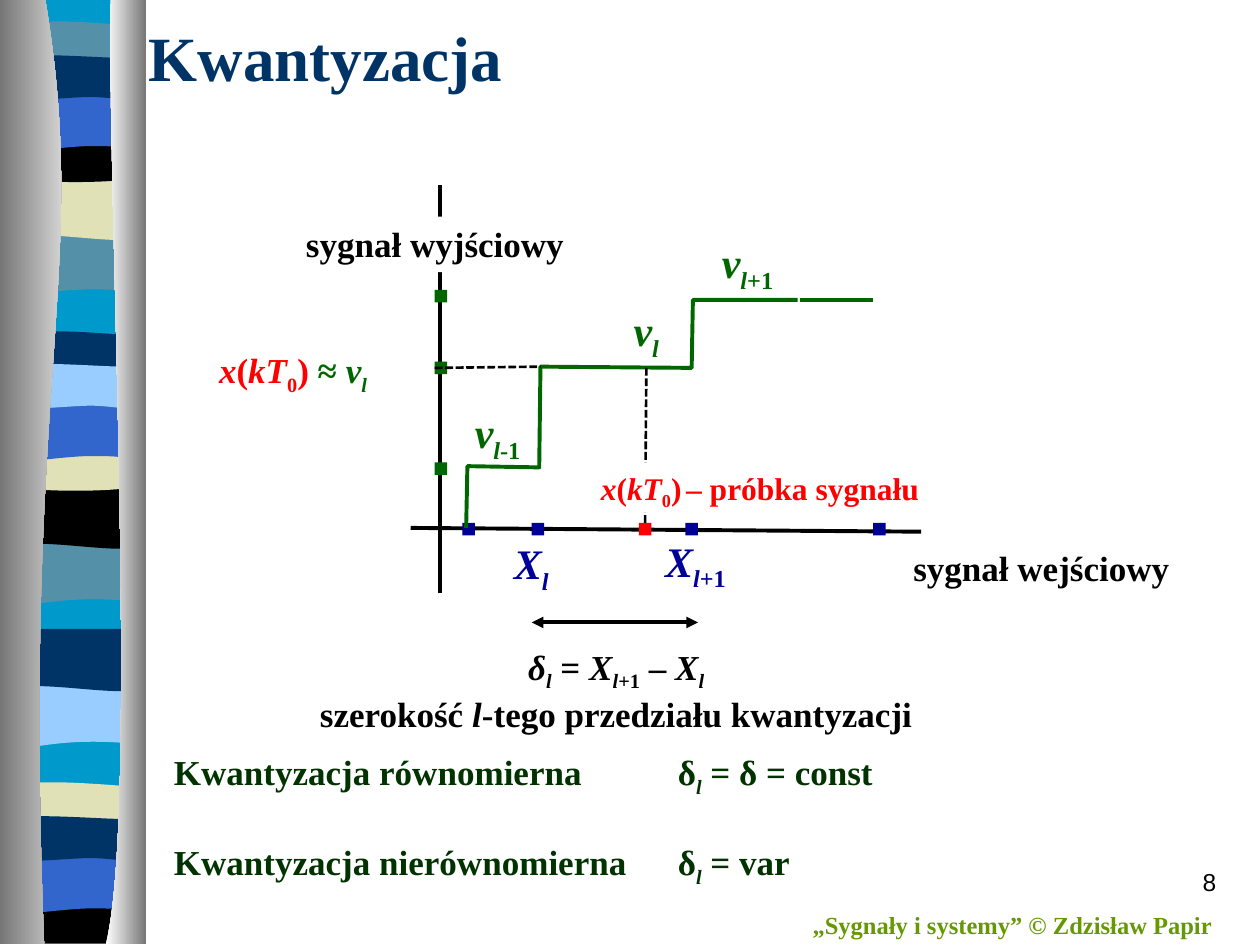
from lxml.etree import SubElement
from pptx import Presentation
from pptx.dml.color import RGBColor
from pptx.enum.dml import MSO_LINE
from pptx.enum.shapes import MSO_CONNECTOR, MSO_SHAPE
from pptx.enum.text import MSO_ANCHOR, PP_ALIGN
from pptx.oxml.ns import qn
from pptx.util import Inches, Pt

COLS, ROWS = 10, 7.5
CELL = Inches(1)
NAVY, BLUE, GREEN, RED, BLACK, WHITE = (
    "003366", "000099", "006600", "FF0000", "000000", "FFFFFF")
L, R = 0.05, 1.14

WAVES = {
    "swell": ([(R, 0)], [(0.39, 0.39), (0.24, 0.55), (L, 0.47)], 0.47),
    "dip": ([(R, 0)], [(0.96, 0.55), (0.39, 0.41), (L, 0.47)], 0.47),
    "thin": ([(0.12, -0.05), (0.29, -0.04), (0.47, -0.04),
              (0.65, -0.04), (1, -0.01), (R, 0)],
             [(0.96, 0.29), (0.24, 0.29), (L, 0.24)], 0.24),
    "bowl": ([(0.72, 0.05), (0.91, 0), (R, 0)],
             [(0.96, 0.38), (0.24, 0.38), (L, 0.32)], 0.32),
    "arch": ([(R, 0)], [(0.97, 0.42), (0.9, 0.42), (0.72, 0.42),
                        (0.54, 0.42), (0.22, 0.47), (L, 0.47)], 0.47),
    "roll": ([(0.21, -0.05), (0.79, 0), (0.97, 0), (1.15, 0), (1.1, 0), (R, 0)],
             [(1.07, 0.36), (0.9, 0.31), (0.72, 0.31),
              (0.54, 0.31), (0.17, 0.36), (L, 0.31)], 0.31),
    "base": ([(0.72, 0.05), (0.91, 0), (R, 0)], [(L, 0.37)], 0.37),
}
BANDS = [
    ("swell", 1.85, "5490A8"), ("dip", 1.41, "E1E1B7"), ("thin", 0.21, "5490A8"),
    ("bowl", 1.08, BLACK), ("arch", 0.74, "3366CC"), ("roll", 0.46, NAVY),
    ("swell", 4.31, "5490A8"), ("dip", 3.86, BLACK), ("thin", 2.67, NAVY),
    ("bowl", 3.53, "E1E1B7"), ("arch", 3.2, "3366CC"), ("roll", 2.91, "99CCFF"),
    ("swell", 5.44, "99CCFF"), ("dip", 4.99, NAVY), ("thin", 6.25, "E1E1B7"),
    ("base", 7.12, BLACK), ("arch", 6.79, "3366CC"), ("roll", 6.5, NAVY),
]


def hue(code):
    """Turn a hex string into a colour."""
    return RGBColor.from_string(code)


def span(*cells):
    """Turn counts of grid cells into lengths."""
    return [round(n * CELL) for n in cells]


def trace(slide, start, *edges, close=True, top=0):
    """Draw an outline of straight edges (one point) and curves (threes)."""
    pts = [span(x, y + top) for x, y in [start, *(p for e in edges for p in e)]]
    pen = slide.shapes.build_freeform(*pts[0], scale=1.0)
    pen.add_line_segments(pts[1:], close=close)
    form = pen.convert_to_shape()
    form.shadow.inherit = False
    form.line.fill.background()
    nodes = iter(list(form._element.iter(qn("a:lnTo"))))
    for edge in edges:
        for _ in range(max(1, len(edge) // 3)):
            node = next(nodes)
            if len(edge) > 1:
                node.tag = qn("a:cubicBezTo")
                for more in (next(nodes), next(nodes)):
                    node.append(more[0])
                    more.getparent().remove(more)
    return form


def paint(form, code):
    """Fill a shape with one colour."""
    form.fill.solid()
    form.fill.fore_color.rgb = hue(code)


def shade(form, *codes):
    """Fill a shape with a gradient from left to right."""
    form.fill.gradient()
    form.fill.gradient_angle = 0
    for stop, code in zip(form.fill.gradient_stops, codes):
        stop.color.rgb = hue(code)


def border(slide):
    """Draw the striped side border and its two pillars."""
    paint(trace(slide, (R, 0), [(R, 7.47)], [(L, 7.47)], [(L, 0)]), "0099CC")
    for kind, top, code in BANDS:
        lid, foot, deep = WAVES[kind]
        paint(trace(slide, (R, 0), [(R, deep)], foot, [(L, 0)], lid, top=top), code)
    shade(trace(slide, (0.36, 0), [(0.72, 2.16), (0.17, 2.96), (0.35, 7.49)],
                [(0, 7.49)], [(0, 0)]), "767676", WHITE)
    shade(trace(slide, (0.88, 0), [(0.84, 1.25), (1.11, 6.46), (0.84, 7.49)],
                [(1.16, 7.49)], [(1.16, 0)]), WHITE, "767676")


def write(box, *paras, size=20, code=BLACK, font="Times New Roman", bold=True,
          align=PP_ALIGN.LEFT, wrap=False, anchor=MSO_ANCHOR.TOP, gap=0):
    """Set paragraphs of (text, marks, colour) runs; i is italic, s is subscript."""
    frame = box.text_frame
    frame.word_wrap, frame.vertical_anchor = wrap, anchor
    for n, runs in enumerate(paras):
        para = frame.add_paragraph() if n else frame.paragraphs[0]
        para.alignment = align
        para.space_before = Pt(gap if n else 0)
        for text, marks, *own in runs:
            if text == "\n":
                para.add_line_break()
                continue
            run = para.add_run()
            run.text = text
            face = run.font
            face.name, face.size, face.bold = font, Pt(size), bold
            face.italic = "i" in marks
            face.color.rgb = hue(own[0] if own else code)
            if "s" in marks:
                run._r.get_or_add_rPr().set("baseline", "-25000")


def label(slide, area, *runs, back=None, **style):
    """Add a text box, on a plain ground if one is given."""
    box = slide.shapes.add_textbox(*span(*area))
    if back:
        paint(box, back)
    write(box, runs, **style)


def place(box, *area):
    """Move a placeholder to an area of the grid."""
    box.left, box.top, box.width, box.height = span(*area)


def rule(slide, start, end, code=BLACK, width=2.25, dash=False, heads=False):
    """Draw a straight line, dashed or with two arrowheads."""
    link = slide.shapes.add_connector(MSO_CONNECTOR.STRAIGHT, *span(*start, *end))
    link.line.color.rgb = hue(code)
    link.line.width = Pt(width)
    if dash:
        link.line.dash_style = MSO_LINE.SQUARE_DOT
    props = link._element.spPr
    if heads:
        for tag in ("a:headEnd", "a:tailEnd"):
            SubElement(props.find(qn("a:ln")), qn(tag), type="triangle")
    SubElement(props, qn("a:effectLst"))


def mark(slide, x, y, code):
    """Draw a small square mark."""
    dot = slide.shapes.add_shape(MSO_SHAPE.RECTANGLE, *span(x, y, 0.1, 0.1))
    dot.shadow.inherit = False
    dot.line.fill.background()
    paint(dot, code)


def graph(slide):
    """Draw the staircase graph with its axes and labels."""
    label(slide, (2.33, 5.07, 5.12, 0.77), ("δ", "i"), ("l", "is"), (" = ", ""),
          ("X", "i"), ("l", "is"), ("+1", "s"), (" – ", ""), ("X", "i"), ("l", "is"),
          ("\n", ""), ("szerokość ", ""), ("l", "i"),
          ("-tego przedziału kwantyzacji", ""), align=PP_ALIGN.CENTER, wrap=True)
    rule(slide, (3.26, 4.19), (7.31, 4.22))
    for x in (3.67, 6.93, 4.22, 5.44):
        mark(slide, x, 4.15, BLUE)
    steps = trace(slide, (3.7, 4.19), [(3.71, 3.7)], [(4.28, 3.71)], [(4.29, 2.91)],
                  [(5.49, 2.92)], [(5.5, 2.38)], [(6.33, 2.38)], close=False)
    steps.fill.background()
    steps.line.color.rgb = hue(GREEN)
    steps.line.width = Pt(2.25)
    for area, name, tail, code in (
            ((5.18, 4.2, 0.73, 0.5), "X", "+1", BLUE),
            ((3.98, 4.22, 0.49, 0.5), "X", "", BLUE),
            ((4.93, 2.37, 0.41, 0.5), "v", "", GREEN),
            ((5.63, 1.83, 0.65, 0.5), "v", "+1", GREEN),
            ((3.67, 3.18, 0.6, 0.5), "v", "-1", GREEN)):
        runs = [(name, "i"), ("l", "is")] + ([(tail, "s")] if tail else [])
        label(slide, area, *runs, size=24, code=code)
    rule(slide, (4.22, 4.94), (5.54, 4.94), heads=True)
    mark(slide, 5.07, 4.15, RED)
    label(slide, (7.15, 4.29, 2.32, 0.44), ("sygnał wejściowy", ""))
    rule(slide, (3.49, 4.71), (3.49, 1.47))
    label(slide, (2.33, 1.72, 2.34, 0.44), ("sygnał wyjściowy", ""), back=WHITE)
    rule(slide, (6.35, 2.38), (6.93, 2.38), GREEN)
    for y in (2.87, 2.3, 3.67):
        mark(slide, 3.45, y, GREEN)
    rule(slide, (5.12, 4.15), (5.13, 2.92), width=1.5, dash=True)
    rule(slide, (3.45, 2.92), (4.29, 2.91), width=1.5, dash=True)
    probe = [("x", "i"), ("(", ""), ("kT", "i"), ("0", "s")]
    label(slide, (4.67, 3.67, 2.83, 0.4), *probe, (")", ""), (" ", "s"),
          ("– próbka sygnału", ""), size=18, code=RED, back=WHITE)
    label(slide, (1.64, 2.72, 1.5, 0.44), *probe, (") ", ""), ("≈ ", "", GREEN),
          ("v", "i", GREEN), ("l", "is", GREEN), code=RED, back=WHITE)


def main():
    """Build the slide and save it."""
    deck = Presentation()
    deck.slide_width, deck.slide_height = span(COLS, ROWS)
    slide = deck.slides.add_slide(deck.slide_layouts[1])
    border(slide)
    title, body = slide.shapes.title, slide.placeholders[1]
    place(title, 1.08, -0.18, 8.5, 1.25)
    write(title, [("Kwantyzacja", "")], size=36, code=NAVY, wrap=True,
          anchor=MSO_ANCHOR.MIDDLE)
    label(slide, (6.35, 7.17, 3.41, 0.34),
          ("„Sygnały i systemy” © Zdzisław Papir", ""), size=14, code="669900")
    label(slide, (7.67, 6.83, 2.08, 0.5), ("8", ""), size=14, font="Arial",
          bold=False, align=PP_ALIGN.RIGHT, wrap=True)
    graph(slide)
    place(body, 1.28, 5.91, 6.66, 1.11)
    write(body, *[[(f"Kwantyzacja {kind}\tδ", ""), ("l", "is"), (f" = {value}", "")]
                  for kind, value in (("równomierna", "δ = const"),
                                      ("nierównomierna", "var"))],
          code="003300", wrap=True, gap=24)
    for para in body.text_frame.paragraphs:
        props = para._p.get_or_add_pPr()
        for key, value in (("marL", 0), ("indent", 0), ("defTabSz", CELL)):
            props.set(key, str(int(value)))
        SubElement(props, qn("a:buNone"))
    deck.save("out.pptx")


if __name__ == "__main__":
    main()
